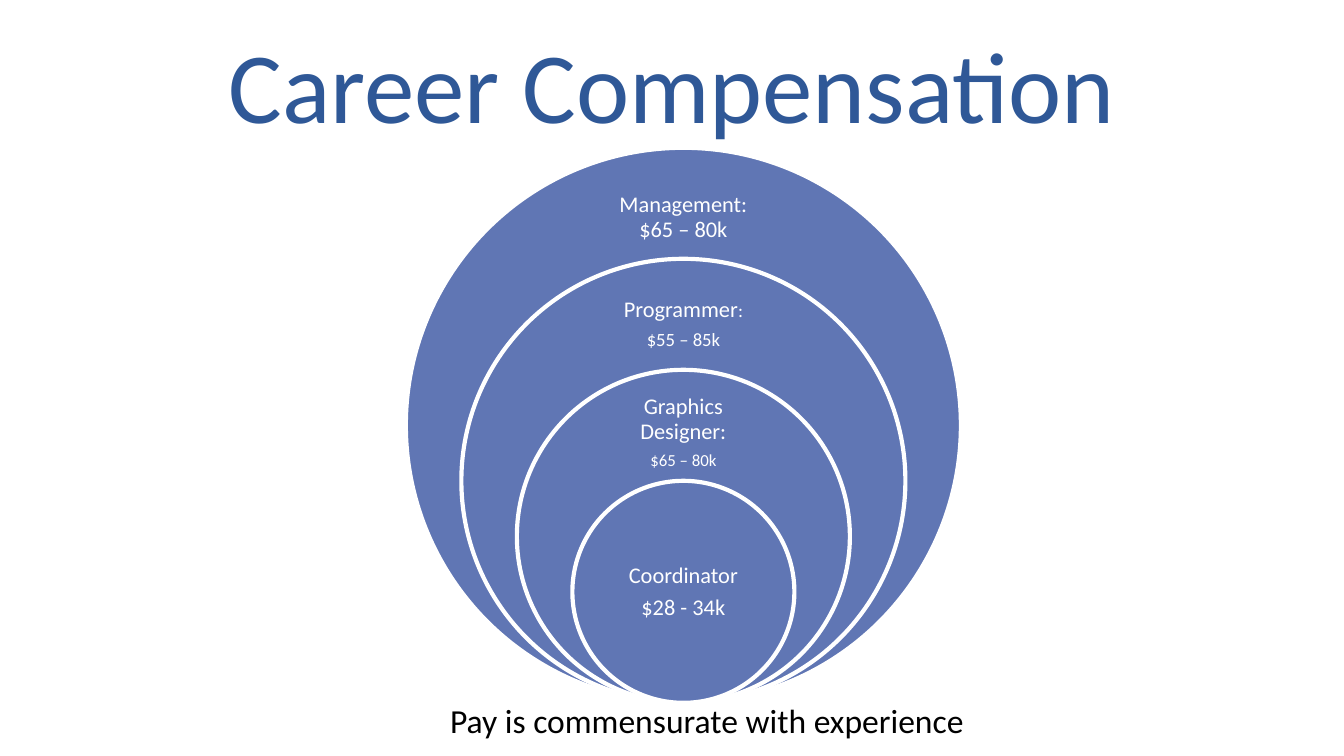
from pptx import Presentation
from pptx.dml.color import RGBColor
from pptx.enum.shapes import MSO_SHAPE as SHAPE
from pptx.enum.text import MSO_ANCHOR as ANCHOR, MSO_AUTO_SIZE as AUTO, PP_ALIGN as ALIGN
from pptx.util import Inches, Pt

FONT = "Calibri"
COLORS = {"title": "2F5897", "disc": "6076B4", "white": "FFFFFF", "black": "000000"}

TITLE = "Career Compensation"
NOTE = "Pay is commensurate with experience"
# Outermost first: label box (left, top, width, height), paragraphs of (text, size) runs
ROLES = [
    ((4.51, 1.31, 1.15, 0.62), [[("Management: $65 – 80k", 12)]]),
    ((4.51, 2.12, 1.15, 0.59), [[("Programmer", 12), (":", 10)], [("$55 – 85k", 10)]]),
    ((4.51, 2.94, 1.15, 0.56), [[("Graphics Designer:", 12)], [("$65 – 80k", 9)]]),
    ((4.5, 3.99, 1.17, 0.83), [[("Coordinator", 12)], [("$28 - 34k", 12)]]),
]

# Discs share a centre line and a bottom edge
LEFT, BOTTOM, DIAMETER = 3.02, 5.23, 4.13
CENTER_X = LEFT + DIAMETER / 2
SHRINK = 0.2
INSET = 0.09


def rgb(name):
    return RGBColor.from_string(COLORS[name])


def style(font, size, color):
    font.name, font.size = FONT, Pt(size)
    font.color.rgb = rgb(color)


def add_disc(shapes, d):
    sp = shapes.add_shape(SHAPE.OVAL, Inches(CENTER_X - d / 2), Inches(BOTTOM - d),
                          Inches(d), Inches(d))
    sp.shadow.inherit = False
    sp.fill.solid()
    sp.fill.fore_color.rgb = rgb("disc")
    sp.line.color.rgb = rgb("white")
    sp.line.width = Pt(2.25)


def add_label(shapes, box, paragraphs):
    tf = shapes.add_textbox(*map(Inches, box)).text_frame
    tf.word_wrap = True
    tf.vertical_anchor = ANCHOR.MIDDLE
    tf.margin_left = tf.margin_right = tf.margin_top = tf.margin_bottom = Inches(INSET)
    for i, runs in enumerate(paragraphs):
        p = tf.add_paragraph() if i else tf.paragraphs[0]
        p.alignment = ALIGN.CENTER
        p.line_spacing = 0.9
        p.space_after = Pt(4.2)
        for text, size in runs:
            r = p.add_run()
            r.text = text
            style(r.font, size, "white")


# Widescreen 16:9 slide
prs = Presentation()
prs.slide_width = Inches(10)
prs.slide_height = prs.slide_width * 9 // 16
s = prs.slides.add_slide(prs.slide_layouts[5])

# Title
title = s.shapes.title
title.left, title.top, title.width, title.height = map(Inches, (0.5, 0.12, 9, 1))
tf = title.text_frame
tf.text = TITLE
tf.auto_size = AUTO.NONE
tf.vertical_anchor = ANCHOR.BOTTOM
p = tf.paragraphs[0]
p.alignment = ALIGN.CENTER
p.line_spacing = Pt(58)
style(p.font, 54, "title")

# Nested discs with their labels
group = s.shapes.add_group_shape()
for i, (box, paragraphs) in enumerate(ROLES):
    add_disc(group.shapes, DIAMETER * (1 - SHRINK * i))
    add_label(group.shapes, box, paragraphs)

# Note below the discs
tf = s.shapes.add_textbox(*map(Inches, (3.25, 5.16, 4.08, 0.4))).text_frame
tf.word_wrap = True
tf.auto_size = AUTO.SHAPE_TO_FIT_TEXT
tf.text = NOTE
style(tf.paragraphs[0].font, 18, "black")

prs.save("out.pptx")
